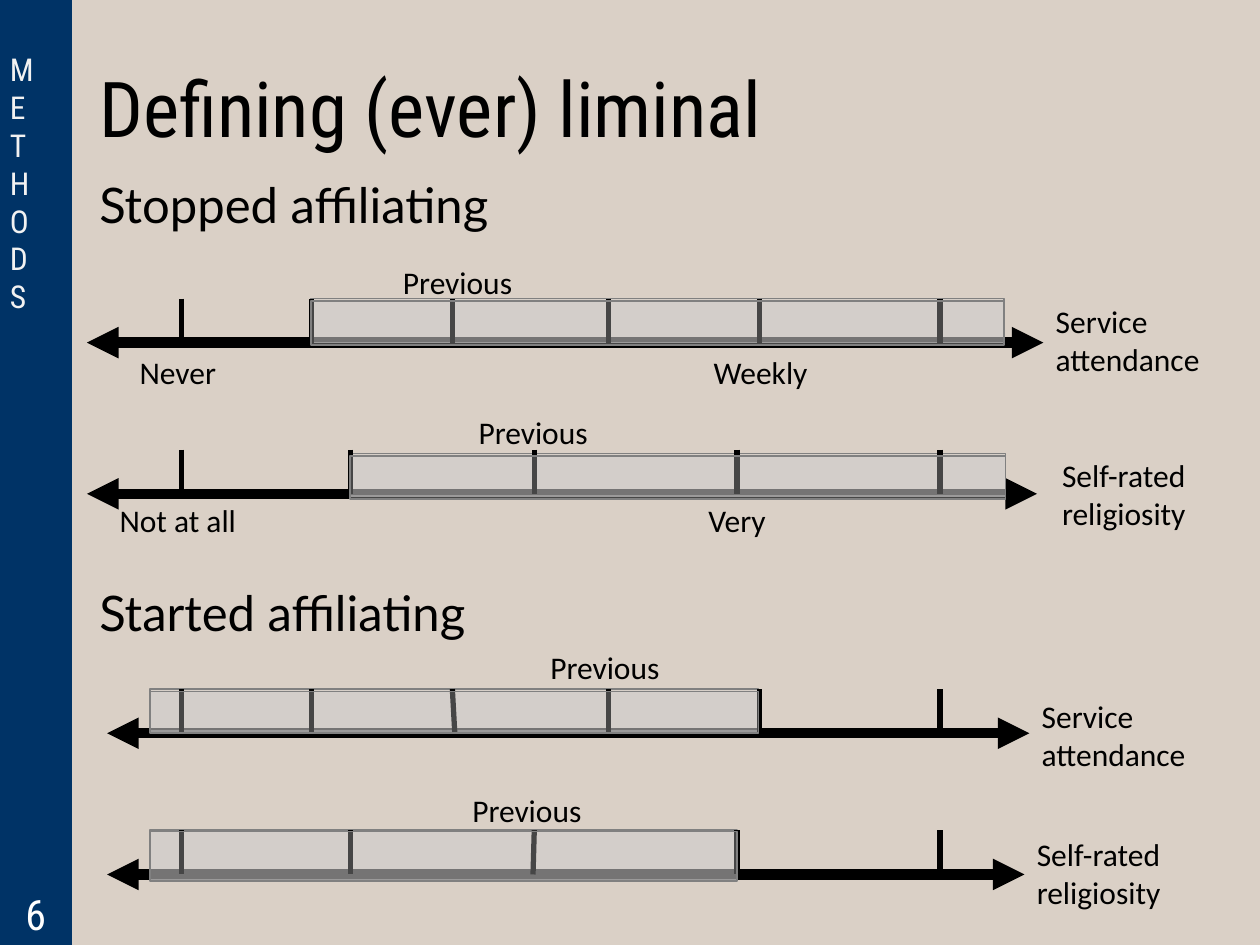
from dataclasses import dataclass, field

from lxml.etree import SubElement
from pptx import Presentation
from pptx.dml.color import RGBColor
from pptx.enum.shapes import MSO_CONNECTOR as Conn, MSO_SHAPE as Shape
from pptx.enum.text import MSO_ANCHOR as Anchor, PP_ALIGN as Align
from pptx.oxml.ns import qn
from pptx.util import Pt

COLORS = {
    "background": "DAD0C6",
    "sidebar": "003366",
    "section": "F2F2F2",
    "white": "FFFFFF",
    "black": "000000",
    "band": "D0CECE",
    "band_line": "808080",
}
BAND_OPACITY = 34
HEADING_FONT, BODY_FONT, LABEL_FONT = "Roboto Condensed", "Lato", "Calibri"
ATTENDANCE_TICKS = (103.7, 177.8, 258.5, 347.8, 434.2, 537.1)
RELIGIOSITY_TICKS = (103.7, 200.2, 305.3, 421.2, 537.1)


@dataclass
class Box:
    left: float
    top: float
    width: float
    height: float


@dataclass
class TextStyle:
    size: float
    font: str = LABEL_FONT
    color: str = "black"
    line_spacing: float | None = None
    space_before: float = 0


@dataclass
class Scale:
    """A two-headed axis with ticks, a shaded band and its labels."""
    name: str
    name_at: tuple[float, float]
    previous_at: tuple[float, float]
    start: float
    end: float
    axis_y: float
    tick_top: float
    ticks: tuple[float, ...]
    band: Box
    overlay_shift: float
    tick_lean: dict[int, float] = field(default_factory=dict)


@dataclass
class EndLabels:
    text: str
    box: Box
    tab: float


SCALES = [
    Scale("Service attendance", (596.2, 169.2), (223.2, 146.9), 49.7, 596.2,
          195.8, 170.6, ATTENDANCE_TICKS, Box(177.8, 170.6, 396, 25.2), 1.4),
    Scale("Self-rated religiosity", (599.8, 257), (266.4, 232.6), 49.7, 592.6,
          282.2, 257, RELIGIOSITY_TICKS, Box(200.2, 259.2, 374.4, 24.5), 1.4),
    Scale("Service attendance", (588.2, 394.6), (307.4, 366.5), 61.2, 588.2,
          419, 393.8, ATTENDANCE_TICKS, Box(85.7, 393.8, 347.8, 23.8), 1.4,
          {2: 1.4}),
    Scale("Self-rated religiosity", (585.4, 473.8), (262.8, 448.6), 61.2, 585.4,
          499.7, 474.5, RELIGIOSITY_TICKS, Box(85.7, 474.5, 335.5, 28.1), 0.7,
          {2: -0.7}),
]
END_LABELS = [
    EndLabels("Never\tWeekly", Box(72.7, 198, 501.1, 28.8), 328),
    EndLabels("Not at all\tVery", Box(61.2, 283, 517.7, 28.8), 336.5),
]
LABEL = TextStyle(18)
TITLE = TextStyle(44, HEADING_FONT, line_spacing=0.9)
SUBTITLE = TextStyle(28, BODY_FONT, line_spacing=0.9, space_before=10)


def rgb(name: str) -> RGBColor:
    return RGBColor.from_string(COLORS[name])


def add_text(s, text: str, box: Box, style: TextStyle, anchor=Anchor.TOP,
             align=Align.LEFT):
    sp = s.shapes.add_textbox(Pt(box.left), Pt(box.top), Pt(box.width), Pt(box.height))
    tf = sp.text_frame
    tf.word_wrap = True
    tf.vertical_anchor = anchor
    tf.text = text
    p = tf.paragraphs[0]
    p.alignment = align
    if style.line_spacing:
        p.line_spacing = style.line_spacing
    p.space_before = Pt(style.space_before)
    for r in p.runs:
        r.font.size = Pt(style.size)
        r.font.name = style.font
        r.font.color.rgb = rgb(style.color)
    return tf


def add_rect(s, box: Box, fill: str, line: str, opacity: int = 100) -> None:
    sp = s.shapes.add_shape(Shape.RECTANGLE, Pt(box.left), Pt(box.top),
                            Pt(box.width), Pt(box.height))
    sp.shadow.inherit = False
    sp.fill.solid()
    sp.fill.fore_color.rgb = rgb(fill)
    sp.line.color.rgb = rgb(line)
    sp.line.width = Pt(1)
    if opacity < 100:
        color = sp.fill._xPr.find(qn("a:solidFill"))[0]
        SubElement(color, qn("a:alpha")).set("val", str(opacity * 1000))


def add_line(s, x1: float, y1: float, x2: float, y2: float, width: float,
             arrows: bool = False) -> None:
    cn = s.shapes.add_connector(Conn.STRAIGHT, Pt(x1), Pt(y1), Pt(x2), Pt(y2))
    cn.line.color.rgb = rgb("black")
    cn.line.width = Pt(width)
    if arrows:
        ln = cn.line._get_or_add_ln()
        for end in ("a:headEnd", "a:tailEnd"):
            SubElement(ln, qn(end)).set("type", "triangle")
    SubElement(cn._element.spPr, qn("a:effectLst"))


def add_scale(s, scale: Scale) -> None:
    band = scale.band
    overlay = Box(band.left, band.top + scale.overlay_shift, band.width, band.height)
    add_line(s, scale.start, scale.axis_y, scale.end, scale.axis_y, 6, arrows=True)
    add_rect(s, band, "band", "band_line", BAND_OPACITY)
    for i, x in enumerate(scale.ticks):
        add_line(s, x, scale.tick_top, x + scale.tick_lean.get(i, 0), scale.axis_y, 3)
    add_text(s, "Previous", Box(*scale.previous_at, 81.4, 28.8), LABEL)
    add_text(s, scale.name, Box(*scale.name_at, 105.8, 51.1), LABEL)
    add_rect(s, overlay, "band", "band_line", BAND_OPACITY)


def add_end_labels(s, labels: EndLabels) -> None:
    """Write both labels in one line, the second one at a tab stop."""
    tf = add_text(s, labels.text, labels.box, LABEL)
    tabs = SubElement(tf.paragraphs[0]._p.get_or_add_pPr(), qn("a:tabLst"))
    tab = SubElement(tabs, qn("a:tab"))
    tab.set("pos", str(Pt(labels.tab)))
    tab.set("algn", "l")


def add_sidebar(s) -> None:
    add_rect(s, Box(0, 0, 41, 540), "sidebar", "sidebar")
    add_text(s, "6", Box(0, 504, 41, 36), TextStyle(24, HEADING_FONT, "white"),
             align=Align.CENTER)
    tf = add_text(s, "METHODS", Box(-1.4, 28.8, 43.2, 475.2),
                  TextStyle(18, HEADING_FONT, "section"), Anchor.MIDDLE)
    tf.margin_top = tf.margin_bottom = 0
    tf._txBody.bodyPr.set("vert", "wordArtVert")


def main() -> None:
    prs = Presentation()
    prs.slide_width, prs.slide_height = Pt(720), Pt(540)
    s = prs.slides.add_slide(prs.slide_layouts[6])
    s.background.fill.solid()
    s.background.fill.fore_color.rgb = rgb("background")
    add_text(s, "Defining (ever) liminal", Box(49.7, 28.8, 620.6, 71.3), TITLE,
             Anchor.MIDDLE)
    for text, top in (("Stopped affiliating", 100), ("Started affiliating", 333.4)):
        add_text(s, text, Box(49.7, top, 620.6, 55.4), SUBTITLE)
    add_sidebar(s)
    for scale in SCALES:
        add_scale(s, scale)
    for labels in END_LABELS:
        add_end_labels(s, labels)
    prs.save("out.pptx")


if __name__ == "__main__":
    main()
